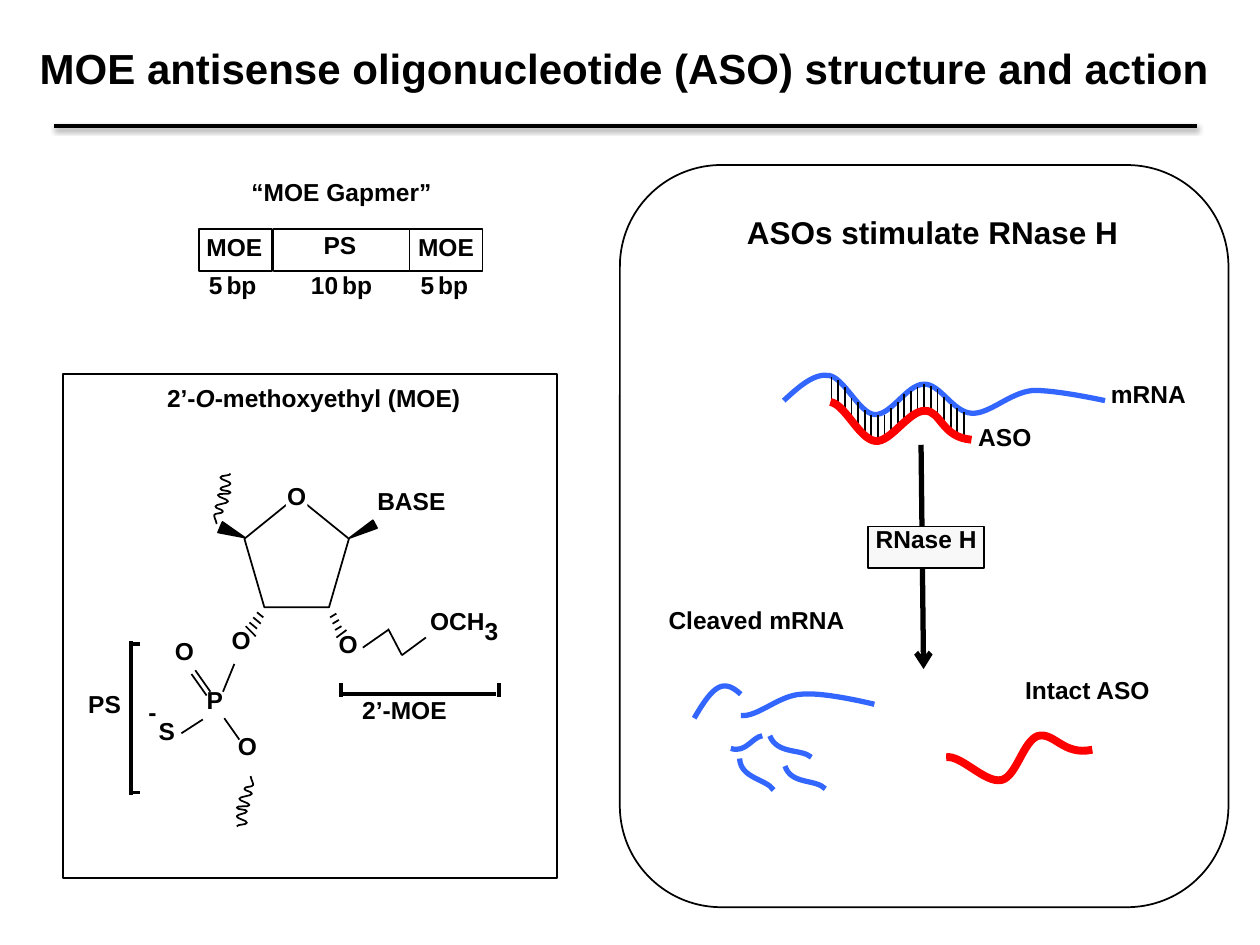
from pptx import Presentation, util as u
from pptx.dml.color import RGBColor
from pptx.enum import shapes, text as t
from pptx.oxml.ns import qn
from lxml import etree

HUES = {"ink": "000000", "mrna": "3366FF", "aso": "FF0000",
        "pale": "F8F8F8", "paper": "FFFFFF"}
KIND = shapes.MSO_SHAPE


def size(v):
    """One layout unit is 2.54 cm."""
    return u.Cm(2.54 * v)


def hue(name):
    return RGBColor.from_string(HUES[name])


def fill_text(frame, runs, pt=14, align="CENTER", wrap=True, anchor="TOP", tabs=()):
    """Write runs, each a string or a (string, font settings) pair."""
    frame.word_wrap = wrap
    frame.vertical_anchor = t.MSO_ANCHOR[anchor]
    par = frame.paragraphs[0]
    par.alignment = t.PP_ALIGN[align]
    if tabs:
        stops = etree.SubElement(par._p.get_or_add_pPr(), qn("a:tabLst"))
        for pos in tabs:
            etree.SubElement(stops, qn("a:tab"), pos=str(size(pos)), algn="l")
    for item in [runs] if isinstance(runs, str) else runs:
        words, form = (item, {}) if isinstance(item, str) else item
        run = par.add_run()
        run.text = words
        font = run.font
        font.name, font.bold = "Arial", True
        font.size = u.Pt(form.get("pt", pt))
        font.italic = form.get("italic")
        font.color.rgb = hue("ink")


class Pane:
    """A region of the slide; its parts are placed from its corner."""

    def __init__(self, slide, x, y, w, h):
        self.shapes, self.x, self.y, self.w, self.h = slide.shapes, x, y, w, h

    def group(self):
        """A pane over the same box whose parts are grouped."""
        return Pane(self.shapes.add_group_shape(), self.x, self.y, self.w, self.h)

    def spot(self, x, y):
        return size(self.x + x), size(self.y + y)

    def text(self, x, y, w, runs, h=0.34, **form):
        box = self.shapes.add_textbox(*self.spot(x, y), size(w), size(h))
        fill_text(box.text_frame, runs, **form)

    def line(self, x, y, x2, y2, pt=1):
        bar = self.shapes.add_connector(
            shapes.MSO_CONNECTOR.STRAIGHT, *self.spot(x, y), *self.spot(x2, y2))
        bar.line.color.rgb = hue("ink")
        bar.line.width = u.Pt(pt)
        etree.SubElement(bar._element.spPr, qn("a:effectLst"))
        return bar

    def shape(self, kind, x, y, w, h, fill=None, edge=True, turn=0):
        item = self.shapes.add_shape(kind, *self.spot(x, y), size(w), size(h))
        item.shadow.inherit = False
        item.rotation = turn
        if fill:
            item.fill.solid()
            item.fill.fore_color.rgb = hue(fill)
        else:
            item.fill.background()
        if edge:
            item.line.color.rgb = hue("ink")
            item.line.width = u.Pt(1)
        else:
            item.line.fill.background()

    def curve(self, start, *parts, color="mrna", pt=3):
        """Draw a chain of cubic curves; each part is two handles and an end."""
        path = self.shapes.build_freeform(*self.spot(*start))
        path.add_line_segments([self.spot(*p[4:]) for p in parts], close=False)
        item = path.convert_to_shape()
        legs = list(item._element.iter(qn("a:lnTo")))
        for leg, (a, b, c, d, *_) in zip(legs, parts):
            leg.tag = qn("a:cubicBezTo")
            for i, grip in enumerate(((a, b), (c, d))):
                x, y = self.spot(*grip)
                leg.insert(i, etree.Element(
                    qn("a:pt"), x=str(x - item.left), y=str(y - item.top)))
        item.shadow.inherit = False
        item.fill.background()
        item.line.color.rgb = hue(color)
        item.line.width = u.Pt(pt)


def heading(slide, pane):
    head = slide.shapes.title
    head.left, head.top = pane.spot(0, 0)
    head.width, head.height = size(pane.w), size(pane.h)
    fill_text(head.text_frame, "MOE antisense oligonucleotide (ASO) structure and action",
              pt=24, anchor="MIDDLE")
    rule = pane.line(0.35, 1, 9.42, 1, pt=2)
    glow = etree.SubElement(rule._element.spPr.find(qn("a:effectLst")),
                            qn("a:outerShdw"), blurRad=str(u.Pt(3.1)),
                            dist=str(u.Pt(1.6)), dir="5400000", rotWithShape="0")
    tint = etree.SubElement(glow, qn("a:srgbClr"), val=HUES["ink"])
    etree.SubElement(tint, qn("a:alpha"), val="38000")


def gapmer(pane):
    for x, w, left, top, name in ((0.16, 0.58, 0.12, 0.43, "MOE"),
                                  (0.75, 1.08, 1.05, 0.42, "PS"),
                                  (1.83, 0.58, 1.8, 0.43, "MOE")):
        pane.shape(KIND.RECTANGLE, x, 0.46, w, 0.33)
        pane.text(left, top, 0.67, name, align="LEFT")
    thin = (" ", {"pt": 8})
    pane.text(0.14, 0.73, 2.69, ["5", thin, "bp\t10", thin, "bp\t5", thin, "bp"],
              align="LEFT", tabs=(0.81, 1.68))
    pane.text(0, 0, pane.w, "“MOE Gapmer”")


def sugar(pane):
    """Chemical structure of the MOE unit."""
    pane.text(0.7, 0.02, 2.58, ["2’-", ("O", {"italic": True}), "-methoxyethyl (MOE)"])
    atoms = pane.group()
    atoms.shape(KIND.REGULAR_PENTAGON, 1.44, 0.97, 0.83, 0.88)
    for box, turn in (((2.34, 1.13, 0.07, 0.23), 241.6), ((1.3, 1.15, 0.09, 0.21), 113)):
        atoms.shape(KIND.ISOSCELES_TRIANGLE, *box, fill="ink", turn=turn)
    atoms.shape(KIND.RECTANGLE, 1.77, 0.86, 0.17, 0.33, fill="paper", edge=False)

    hashes = [(2.17, 1.9, 2.12, 1.93), (2.19, 1.95, 2.14, 1.98),
              (2.21, 2, 2.16, 2.03), (2.25, 2.03, 2.17, 2.09),
              (1.59, 1.93, 1.54, 1.89), (1.57, 1.98, 1.51, 1.93),
              (1.54, 2.02, 1.48, 1.97), (1.53, 2.08, 1.45, 2)]
    bonds = [(0.94, 2.85, 1.11, 2.74), (1.27, 2.52, 1.36, 2.3),
             (1.17, 2.52, 1.05, 2.35), (1.14, 2.55, 1.02, 2.38),
             (1.4, 2.9, 1.28, 2.73), (2.38, 2.17, 2.58, 2.03),
             (2.69, 2.23, 2.58, 2.02), (2.69, 2.23, 2.88, 2.09)]
    for ends in hashes + bonds:
        atoms.line(*ends)

    atoms.line(2.19, 2.54, 3.44, 2.54, pt=2.25)
    atoms.line(0.54, 3.34, 0.54, 2.12, pt=2.25)
    for x in (2.21, 3.46):
        atoms.line(x, 2.56, x, 2.45, pt=2.25)
    for y in (2.14, 3.32):
        atoms.line(0.53, y, 0.61, y, pt=2.25)

    wave = [(1.49, 3.19), (1.51, 3.26), (1.44, 3.29), (1.5, 3.33), (1.4, 3.37), (1.48, 3.42),
            (1.38, 3.44), (1.46, 3.47), (1.38, 3.51), (1.46, 3.56), (1.38, 3.59)]
    twin = [(2.71 - x, 4.38 - y) for x, y in wave]
    for pts, lean in ((wave, 0.02), (twin, -0.02)):
        atoms.curve(pts[0], *((a, b + lean, c, d - lean, c, d)
                              for (a, b), (c, d) in zip(pts, pts[1:])),
                    color="ink", pt=1)

    for name, x, y, w in (
            ("O", 2.09, 1.97, 0.33), ("O", 1.24, 1.94, 0.33), ("P", 1.04, 2.42, 0.33),
            ("S", 0.66, 2.66, 0.33), ("O", 0.79, 2.03, 0.33), ("O", 1.29, 2.78, 0.33),
            ("O", 1.68, 0.8, 0.33), ("BASE", 2.39, 0.84, 0.75), ("OCH", 2.72, 1.79, 0.82),
            ("3", 2.99, 1.87, 0.82), ("-", 0.3, 2.51, 0.82),
            ("2’-MOE", 1.42, 2.5, 2.58), ("PS", 0.04, 2.45, 0.58)):
        atoms.text(x, y, w, name, h=0.33)
    pane.shape(KIND.RECTANGLE, 0, 0, pane.w, pane.h)


def action(pane):
    """Cleavage of the mRNA by RNase H."""
    pane.curve((1.3, 1.87), (1.42, 1.76, 1.54, 1.65, 1.66, 1.67),
               (1.78, 1.69, 1.9, 1.97, 2.02, 1.98), (2.15, 1.99, 2.28, 1.74, 2.41, 1.74),
               (2.54, 1.73, 2.64, 1.96, 2.79, 1.97), (2.93, 1.98, 3.09, 1.81, 3.27, 1.79),
               (3.44, 1.78, 3.85, 1.87, 3.85, 1.87))
    arrow = pane.line(2.39, 2.22, 2.41, 4, pt=3)
    etree.SubElement(arrow.line._get_or_add_ln(), qn("a:tailEnd"), type="arrow")

    for bit in (((0.59, 4.39), (0.74, 4.13, 0.82, 4.07, 0.96, 4.2)),
                ((0.96, 4.37), (1.1, 4.38, 1.26, 4.21, 1.44, 4.2),
                 (1.62, 4.18, 2.02, 4.28, 2.02, 4.28)),
                ((0.88, 4.63), (1, 4.67, 1.05, 4.54, 1.13, 4.53)),
                ((0.95, 4.71), (0.96, 4.87, 1.16, 4.87, 1.22, 4.96)),
                ((1.31, 4.77), (1.36, 4.92, 1.55, 4.87, 1.63, 4.95)),
                ((1.19, 4.53), (1.25, 4.68, 1.44, 4.63, 1.52, 4.7))):
        pane.curve(*bit)
    pane.curve((2.59, 4.7), (2.71, 4.68, 2.9, 4.91, 3.03, 4.88),
               (3.15, 4.85, 3.2, 4.57, 3.32, 4.53), (3.45, 4.5, 3.52, 4.69, 3.75, 4.64),
               color="aso", pt=4.5)

    tops = (1.68, 1.71, 1.76, 1.85, 1.88, 1.94, 1.98, 1.98, 1.98, 1.93, 1.88,
            1.82, 1.79, 1.76, 1.74, 1.75, 1.78, 1.84, 1.9, 1.93, 1.96)
    for i, y in enumerate(tops):
        x = 1.68 + i * 1.05 / (len(tops) - 1)
        pane.line(x, y + 0.22, x, y)
    pane.curve((1.67, 1.88), (1.79, 1.9, 1.9, 2.18, 2.03, 2.19),
               (2.15, 2.2, 2.29, 1.95, 2.42, 1.95), (2.55, 1.95, 2.55, 2.16, 2.79, 2.18),
               color="aso", pt=4.5)

    pane.text(0.91, 0.33, 3.18, "ASOs stimulate RNase H", h=0.4, pt=18,
              align="LEFT", wrap=False)
    pane.shape(KIND.RECTANGLE, 1.97, 2.87, 0.92, 0.33, fill="pale")
    for name, x, y, w in (("mRNA", 3.78, 1.65, 0.83), ("ASO", 2.64, 1.99, 0.83),
                          ("RNase H", 1.72, 2.8, 1.42), ("Intact ASO", 3, 4, 1.42),
                          ("Cleaved mRNA", 0.25, 3.44, 1.67)):
        pane.text(x, y, w, name)
    pane.shape(KIND.ROUNDED_RECTANGLE, 0, 0, pane.w, pane.h)


def main():
    deck = Presentation()
    deck.slide_width, deck.slide_height = size(10), size(7.5)
    slide = deck.slides.add_slide(deck.slide_layouts[5])
    heading(slide, Pane(slide, 0.08, 0, 9.75, 1.08))
    action(Pane(slide, 4.92, 1.31, 4.83, 5.89))
    gapmer(Pane(slide, 1.42, 1.36, 2.58, 1.07))
    sugar(Pane(slide, 0.5, 2.97, 3.92, 4))
    deck.save("out.pptx")


if __name__ == "__main__":
    main()
